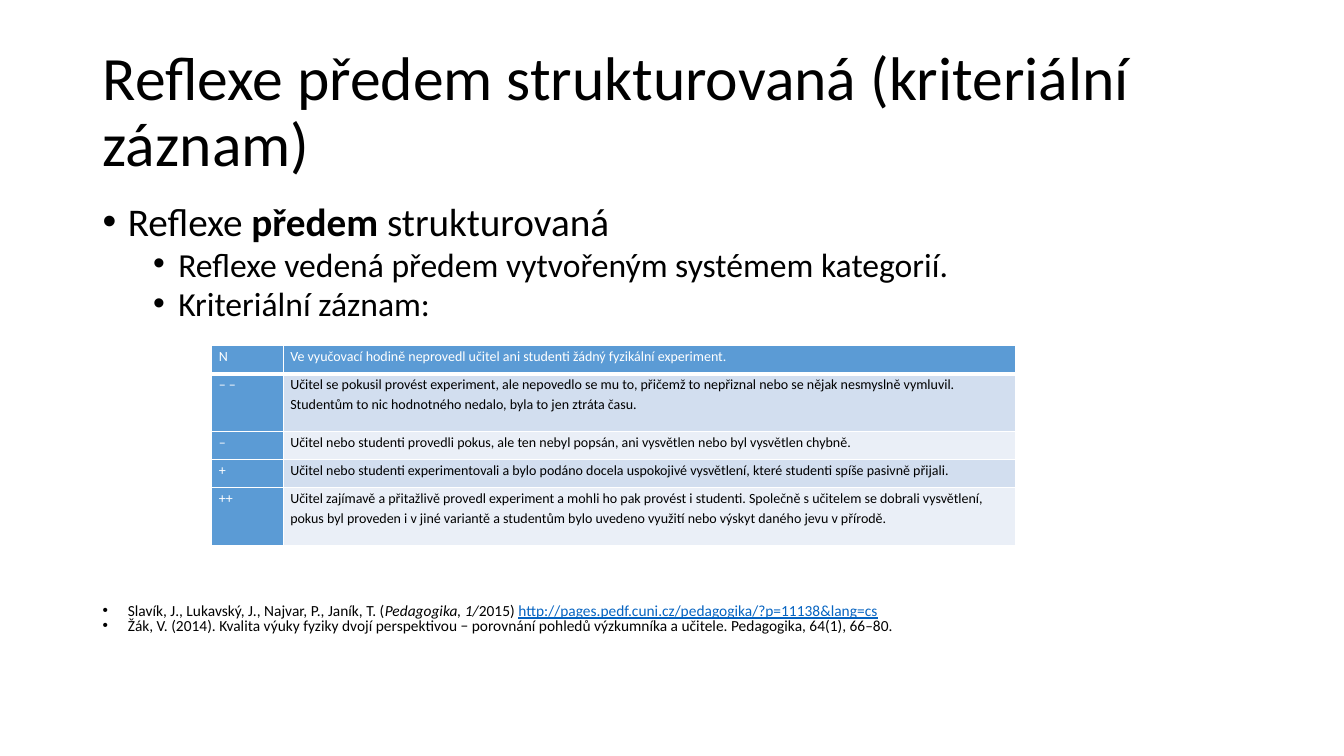
from pptx import Presentation
from pptx.dml.color import RGBColor
from pptx.enum.text import MSO_ANCHOR
from pptx.oxml import parse_xml
from pptx.oxml.ns import nsdecls
from pptx.util import Inches, Pt


def rgb(hex_color):
    return RGBColor.from_string(hex_color)


def add_paragraph(tf, runs, first, spacing, before=0, indent=None, **base):
    p = tf.paragraphs[0] if first else tf.add_paragraph()
    p.line_spacing, p.space_before, p.space_after = spacing, Pt(before), Pt(0)
    if indent is not None:
        pPr = p._p.get_or_add_pPr()
        pPr.set("marL", str(Inches(indent)))
        pPr.set("indent", str(Inches(-0.25)))
        pPr.append(parse_xml(f'<a:buFont {nsdecls("a")} typeface="Arial"/>'))
        pPr.append(parse_xml(f'<a:buChar {nsdecls("a")} char="•"/>'))
    for text, extra in runs:
        r = p.add_run()
        r.text = text
        fmt = {"name": "Calibri", "bold": False, "color": "000000", **base, **extra}
        r.font.color.rgb = rgb(fmt.pop("color"))
        for key, value in fmt.items():
            setattr(r.font, key, value)


prs = Presentation()
prs.slide_width, prs.slide_height = Inches(13.33), Inches(7.5)
s = prs.slides.add_slide(prs.slide_layouts[6])

# Text blocks: top, height, anchor, line spacing, paragraphs
# Each paragraph: runs, size, space before, indent
blocks = [
    (0.4, 1.45, MSO_ANCHOR.MIDDLE, 0.9, [
        ([("Reflexe předem strukturovaná (kriteriální záznam)", {})], 44, 0, None),
    ]),
    (2, 1.35, MSO_ANCHOR.TOP, 0.8, [
        ([("Reflexe ", {}), ("předem", {"bold": True}), (" strukturovaná", {})], 28, 10, 0.25),
        ([("Reflexe vedená předem vytvořeným systémem kategorií.", {})], 24, 5, 0.75),
        ([("Kriteriální záznam:", {})], 24, 5, 0.75),
    ]),
    (5.95, 0.45, MSO_ANCHOR.TOP, 0.8, [
        ([("Slavík, J., Lukavský, J., Najvar, P., Janík, T. (", {}),
          ("Pedagogika, 1/", {"italic": True}),
          ("2015) ", {}),
          ("http://pages.pedf.cuni.cz/pedagogika/?p=11138&lang=cs",
           {"color": "0563C1", "underline": True})], 11, 0, 0.25),
        ([("Žák, V. (2014). Kvalita výuky fyziky dvojí perspektivou − porovnání pohledů "
           "výzkumníka a učitele. Pedagogika, 64(1), 66–80.", {})], 11, 0, 0.25),
    ]),
]
for top, height, anchor, spacing, paragraphs in blocks:
    tf = s.shapes.add_textbox(Inches(0.92), Inches(top), Inches(11.5), Inches(height)).text_frame
    tf.word_wrap = True
    tf.vertical_anchor = anchor
    for i, (runs, size, before, indent) in enumerate(paragraphs):
        add_paragraph(tf, runs, i == 0, spacing, before, indent, size=Pt(size))

# Table of criteria
criteria = [
    ("N", "Ve vyučovací hodině neprovedl učitel ani studenti žádný fyzikální experiment.", 0.28),
    ("– –", "Učitel se pokusil provést experiment, ale nepovedlo se mu to, přičemž to nepřiznal "
     "nebo se nějak nesmyslně vymluvil. Studentům to nic hodnotného nedalo, byla to jen ztráta "
     "času.", 0.57),
    ("–", "Učitel nebo studenti provedli pokus, ale ten nebyl popsán, ani vysvětlen nebo byl "
     "vysvětlen chybně.", 0.28),
    ("+", "Učitel nebo studenti experimentovali a bylo podáno docela uspokojivé vysvětlení, které "
     "studenti spíše pasivně přijali.", 0.28),
    ("++", "Učitel zajímavě a přitažlivě provedl experiment a mohli ho pak provést i studenti. "
     "Společně s učitelem se dobrali vysvětlení, pokus byl proveden i v jiné variantě a studentům "
     "bylo uvedeno využití nebo výskyt daného jevu v přírodě.", 0.57),
]
table = s.shapes.add_table(len(criteria), 2, Inches(2.1), Inches(3.43),
                           Inches(7.97), Inches(1.98)).table
for column, width in zip(table.columns, (0.71, 7.26)):
    column.width = Inches(width)

for i, (mark, description, height) in enumerate(criteria):
    table.rows[i].height = Inches(height)
    for j, text in enumerate((mark, description)):
        cell = table.cell(i, j)
        accent = i == 0 or j == 0
        cell.margin_left = cell.margin_right = Inches(0.07)
        cell.margin_top = cell.margin_bottom = 0
        add_paragraph(cell.text_frame, [(text, {})], True, 1.15, size=Pt(10),
                      color="FFFFFF" if accent else "000000")
        # Borders go before the fill in the cell properties
        for side in "LRTB":
            width = Pt(3 if i == 0 and side == "B" else 1)
            cell._tc.get_or_add_tcPr().append(parse_xml(
                f'<a:ln{side} {nsdecls("a")} w="{width}"><a:solidFill>'
                f'<a:srgbClr val="FFFFFF"/></a:solidFill></a:ln{side}>'))
        cell.fill.solid()
        band = "D2DEEF" if i % 2 else "EAEFF7"
        cell.fill.fore_color.rgb = rgb("5B9BD5" if accent else band)

prs.save("out.pptx")
